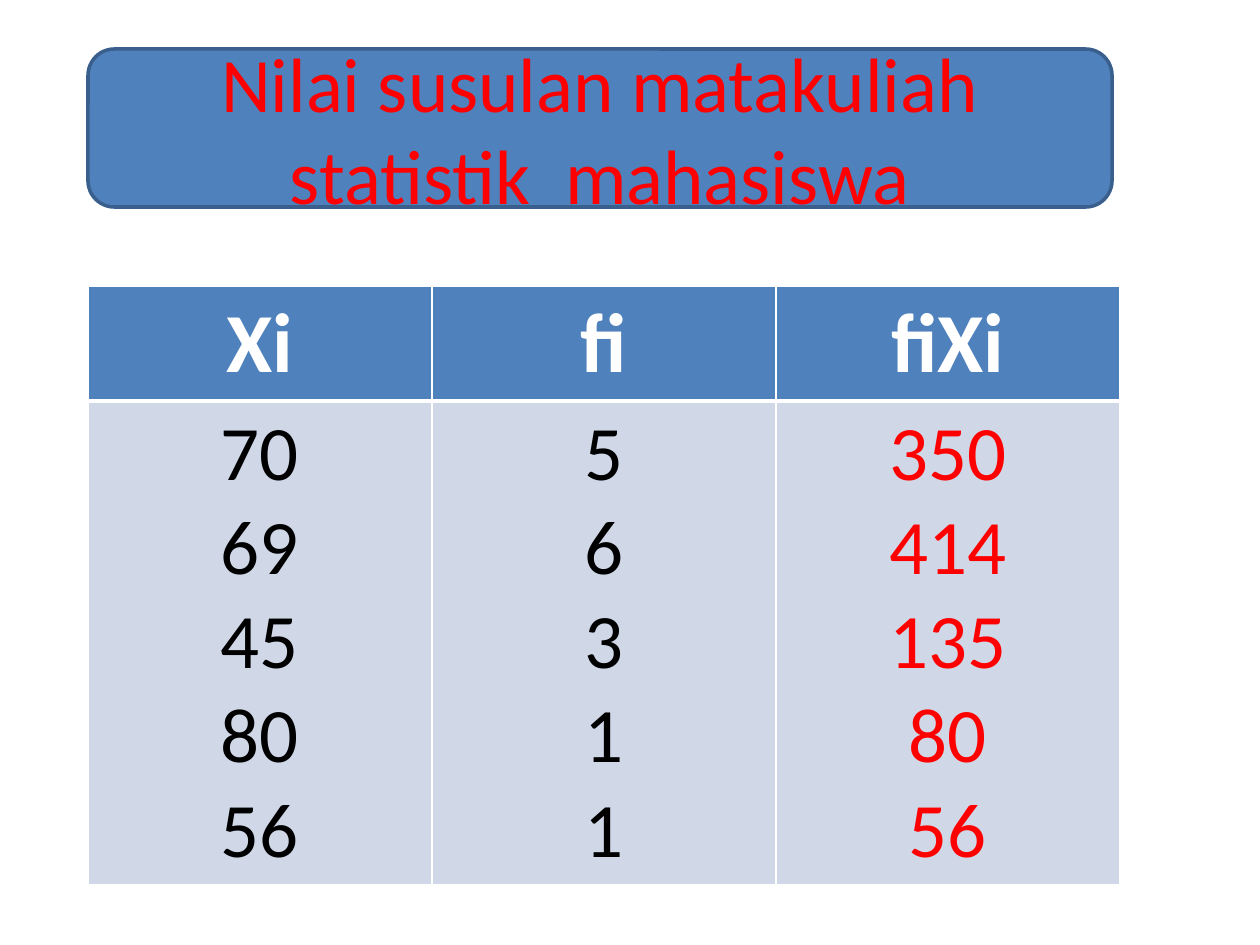
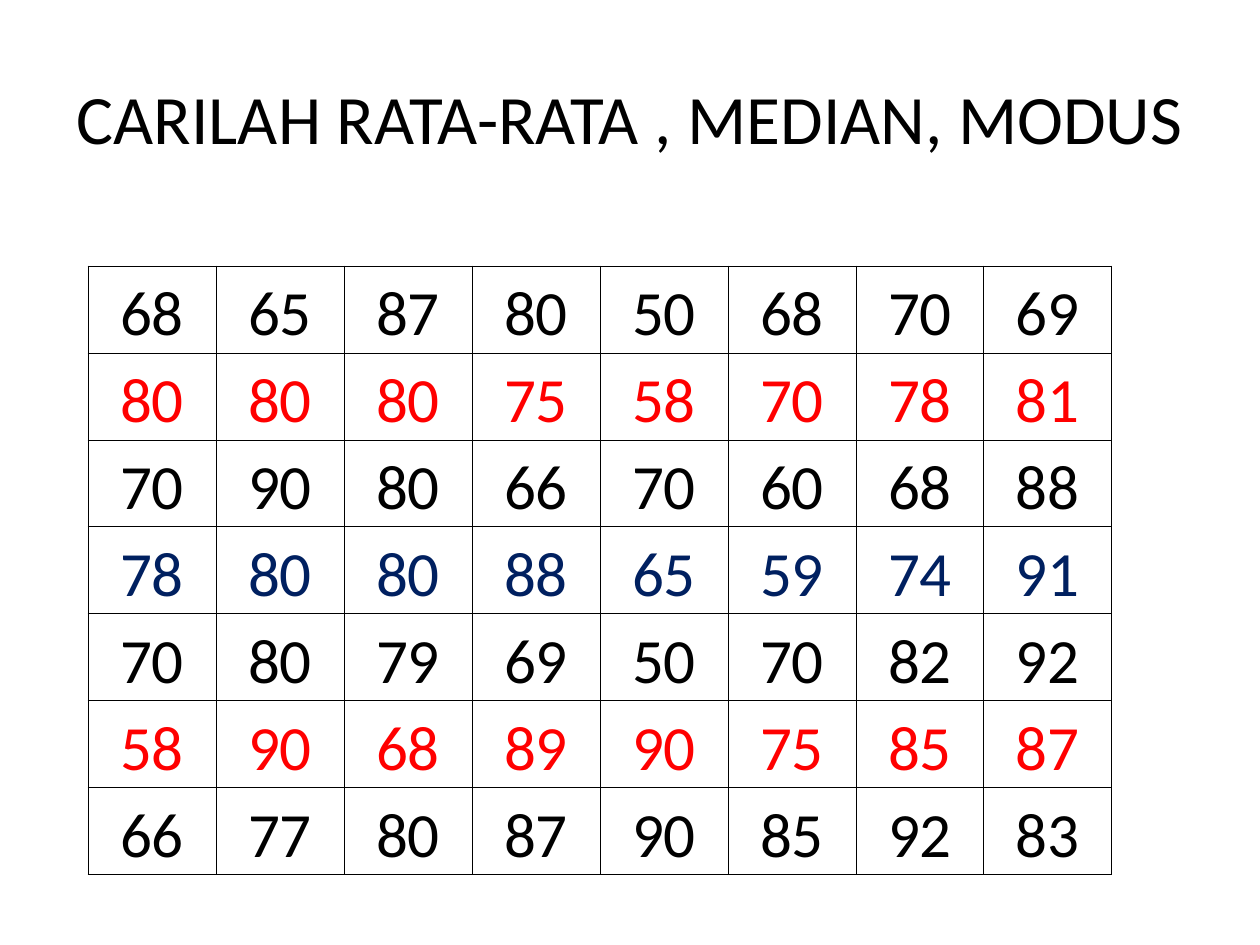
"""Build two statistics slides: a frequency table and a grid of marks."""
from dataclasses import dataclass

from lxml import etree
from pptx import Presentation
from pptx import util as u
from pptx.dml.color import RGBColor
from pptx.enum import shapes, text
from pptx.oxml import ns

EMU_PER_PX = 914400 / 126
FONT = "Calibri"
BLACK = RGBColor(0x00, 0x00, 0x00)
WHITE = RGBColor(0xFF, 0xFF, 0xFF)
RED = RGBColor(0xFF, 0x00, 0x00)
NAVY = RGBColor(0x00, 0x20, 0x60)
BLUE = RGBColor(0x4F, 0x81, 0xBD)
DARK_BLUE = RGBColor(0x3A, 0x5F, 0x8C)
PALE_BLUE = RGBColor(0xD0, 0xD8, 0xE8)

LEFT = 88
BANNER_WIDTH = 1024
VALUES = [70, 69, 45, 80, 56]
FREQUENCIES = [5, 6, 3, 1, 1]
MARKS = [
    [68, 65, 87, 80, 50, 68, 70, 69],
    [80, 80, 80, 75, 58, 70, 78, 81],
    [70, 90, 80, 66, 70, 60, 68, 88],
    [78, 80, 80, 88, 65, 59, 74, 91],
    [70, 80, 79, 69, 50, 70, 82, 92],
    [58, 90, 68, 89, 90, 75, 85, 87],
    [66, 77, 80, 87, 90, 85, 92, 83],
]
MARK_COLOURS = [BLACK, RED, BLACK, NAVY, BLACK, RED, BLACK]


@dataclass(frozen=True)
class TextStyle:
    """Size, colour and weight of centred text."""
    size: float
    colour: RGBColor
    bold: bool = False


@dataclass(frozen=True)
class Borders:
    """Colour of a cell's borders and their widths in points."""
    colour: RGBColor
    width: float
    top: float | None = None
    bottom: float | None = None


@dataclass(frozen=True)
class CellStyle:
    """Look of one table cell."""
    font: TextStyle
    borders: Borders
    fill: RGBColor | None = None
    tight: bool = False


def px(length: float) -> u.Emu:
    """Turn pixels into EMU."""
    return u.Emu(round(length * EMU_PER_PX))


def write(frame, words: str, style: TextStyle) -> None:
    """Fill a text frame with centred paragraphs, one a line."""
    frame.text = words
    for para in frame.paragraphs:
        para.alignment = text.PP_ALIGN.CENTER
        para.font.name = FONT
        para.font.size = u.Pt(style.size)
        para.font.bold = style.bold
        para.font.color.rgb = style.colour


def draw_borders(cell, borders: Borders) -> None:
    """Add the four border lines of a cell."""
    properties = cell._tc.get_or_add_tcPr()
    widths = {"L": borders.width, "R": borders.width,
              "T": borders.top or borders.width, "B": borders.bottom or borders.width}
    for side, width in widths.items():
        line = etree.SubElement(properties, ns.qn(f"a:ln{side}"), w=str(u.Pt(width)))
        fill = etree.SubElement(line, ns.qn("a:solidFill"))
        etree.SubElement(fill, ns.qn("a:srgbClr"), val=str(borders.colour))


def draw_cell(cell, words: str, style: CellStyle) -> None:
    """Write and format one table cell."""
    write(cell.text_frame, words, style.font)
    draw_borders(cell, style.borders)
    if style.fill is None:
        cell.fill.background()
    else:
        cell.fill.solid()
        cell.fill.fore_color.rgb = style.fill
    if style.tight:
        cell.vertical_anchor = text.MSO_ANCHOR.BOTTOM
        cell.margin_left = cell.margin_right = cell.margin_top = px(1)
        cell.margin_bottom = 0


def draw_table(page, top: int, column_width: int, row_heights: list[int],
               rows: list[list[str]], styles: list[list[CellStyle]]) -> None:
    """Draw a table of equal columns, with a style for each cell."""
    columns = len(rows[0])
    table = page.shapes.add_table(len(rows), columns, px(LEFT), px(top),
                                  px(columns * column_width), px(sum(row_heights))).table
    table.first_row = table.horz_banding = False
    for column in table.columns:
        column.width = px(column_width)
    for row, height, row_words, row_styles in zip(table.rows, row_heights, rows, styles):
        row.height = px(height)
        for cell, words, style in zip(row.cells, row_words, row_styles):
            draw_cell(cell, words, style)


def add_frequency_page(deck) -> None:
    """Add the slide with values, frequencies and their products."""
    page = deck.slides.add_slide(deck.slide_layouts[6])
    header = CellStyle(TextStyle(48, WHITE, True), Borders(WHITE, 1, bottom=3), BLUE)
    body, product = (CellStyle(TextStyle(44, colour), Borders(WHITE, 1, top=3), PALE_BLUE)
                     for colour in (BLACK, RED))
    products = [value * count for value, count in zip(VALUES, FREQUENCIES)]
    lists = ["\n".join(map(str, numbers)) for numbers in (VALUES, FREQUENCIES, products)]
    draw_table(page, 286, 344, [115, 482], [["Xi", "fi", "fiXi"], lists],
               [[header] * 3, [body, body, product]])

    banner = page.shapes.add_shape(shapes.MSO_SHAPE.ROUNDED_RECTANGLE,
                                   px(LEFT), px(49), px(BANNER_WIDTH), px(158))
    banner.shadow.inherit = False
    banner.fill.solid()
    banner.fill.fore_color.rgb = BLUE
    banner.line.color.rgb = DARK_BLUE
    banner.line.width = u.Pt(2)
    banner.text_frame.word_wrap = True
    banner.text_frame.vertical_anchor = text.MSO_ANCHOR.MIDDLE
    write(banner.text_frame, "Nilai susulan matakuliah statistik  mahasiswa", TextStyle(44, RED))


def add_marks_page(deck) -> None:
    """Add the slide with the title and the grid of marks."""
    page = deck.slides.add_slide(deck.slide_layouts[5])
    title = page.shapes.title
    title.left, title.top, title.width, title.height = map(px, (63, 38, 1134, 158))
    frame = title.text_frame
    frame.word_wrap = True
    frame.auto_size = text.MSO_AUTO_SIZE.NONE
    frame.vertical_anchor = text.MSO_ANCHOR.MIDDLE
    write(frame, "CARILAH RATA-RATA , MEDIAN, MODUS", TextStyle(39.6, BLACK))

    columns = len(MARKS[0])
    styles = [[CellStyle(TextStyle(36, colour), Borders(BLACK, 0.5), tight=True)] * columns
              for colour in MARK_COLOURS]
    draw_table(page, 266, BANNER_WIDTH // columns, [87] * len(MARKS),
               [[str(mark) for mark in row] for row in MARKS], styles)


def main() -> None:
    """Build and save the deck."""
    deck = Presentation()
    deck.slide_width, deck.slide_height = px(1260), px(945)
    add_frequency_page(deck)
    add_marks_page(deck)
    deck.save("out.pptx")


if __name__ == "__main__":
    main()
